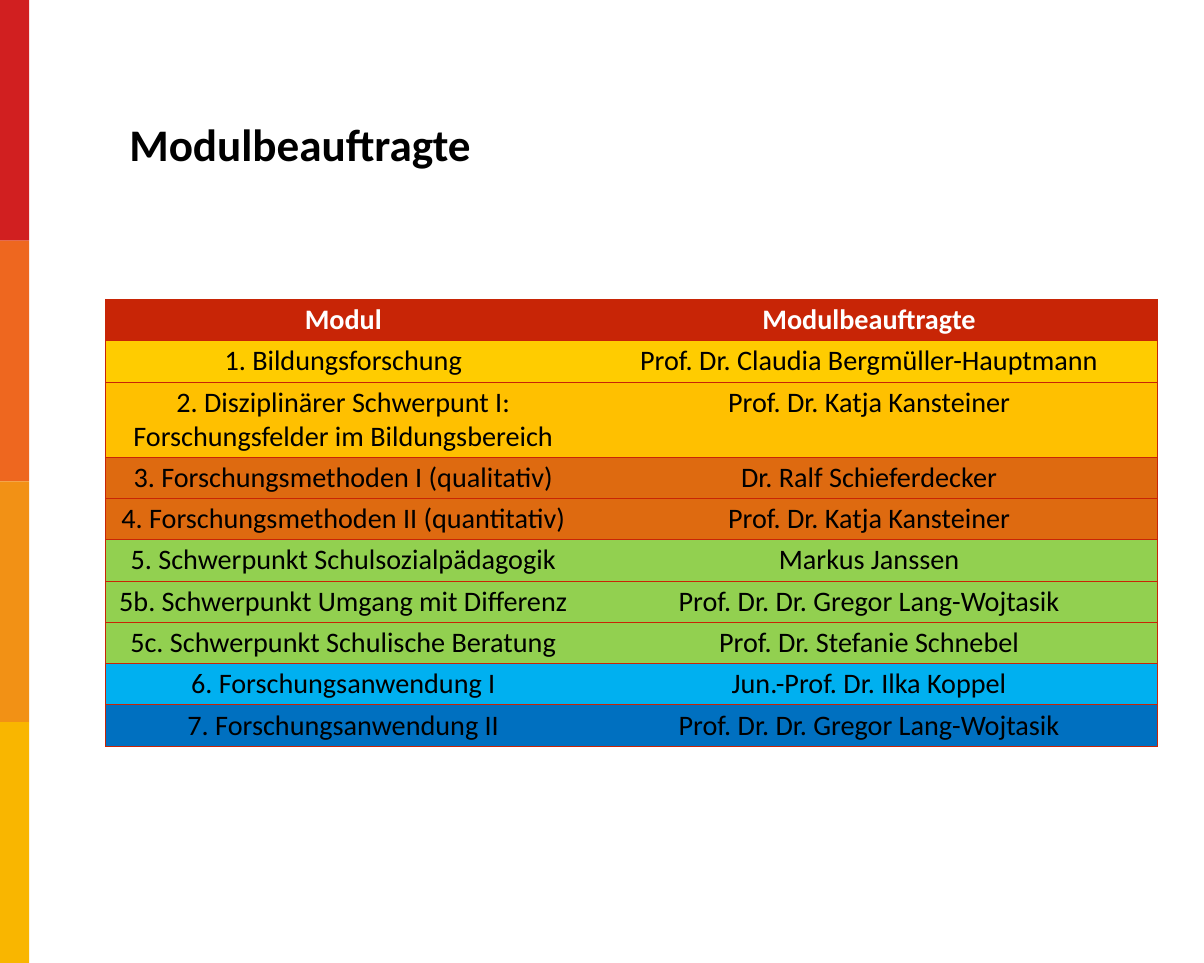
from lxml import etree
from pptx import Presentation
from pptx.dml.color import RGBColor
from pptx.enum.shapes import MSO_SHAPE
from pptx.enum.text import MSO_ANCHOR, PP_ALIGN
from pptx.oxml.ns import qn
from pptx.util import Inches, Pt

# Colours
BLACK = RGBColor(0x00, 0x00, 0x00)
WHITE = RGBColor(0xFF, 0xFF, 0xFF)
DARK_RED = RGBColor(0xC8, 0x25, 0x06)
YELLOW = RGBColor(0xFF, 0xCC, 0x00)
GOLD = RGBColor(0xFF, 0xC0, 0x00)
ORANGE = RGBColor(0xDE, 0x6A, 0x10)
GREEN = RGBColor(0x92, 0xD0, 0x50)
LIGHT_BLUE = RGBColor(0x00, 0xB0, 0xF0)
BLUE = RGBColor(0x00, 0x70, 0xC0)
STRIPE_COLORS = [
    RGBColor(0xD1, 0x1F, 0x20),
    RGBColor(0xEE, 0x67, 0x1F),
    RGBColor(0xF2, 0x91, 0x15),
    RGBColor(0xF9, 0xB6, 0x00),
]

# Content
TITLE = "Modulbeauftragte"
MODULES = [
    ("Modul", "Modulbeauftragte", DARK_RED),
    ("1. Bildungsforschung", "Prof. Dr. Claudia Bergmüller-Hauptmann", YELLOW),
    ("2. Disziplinärer Schwerpunt I: Forschungsfelder im Bildungsbereich",
     "Prof. Dr. Katja Kansteiner", GOLD),
    ("3. Forschungsmethoden I (qualitativ)", "Dr. Ralf Schieferdecker", ORANGE),
    ("4. Forschungsmethoden II (quantitativ)", "Prof. Dr. Katja Kansteiner", ORANGE),
    ("5. Schwerpunkt Schulsozialpädagogik", "Markus Janssen", GREEN),
    ("5b. Schwerpunkt Umgang mit Differenz", "Prof. Dr. Dr. Gregor Lang-Wojtasik", GREEN),
    ("5c. Schwerpunkt Schulische Beratung", "Prof. Dr. Stefanie Schnebel", GREEN),
    ("6. Forschungsanwendung I", "Jun.-Prof. Dr. Ilka Koppel", LIGHT_BLUE),
    ("7. Forschungsanwendung II", "Prof. Dr. Dr. Gregor Lang-Wojtasik", BLUE),
]

# Layout in inches
SLIDE_WIDTH, SLIDE_HEIGHT = 17.78, 14.22
STRIPE_WIDTH = 0.43
COLUMN_WIDTHS = [7.02, 8.51]
ROW_HEIGHT, TALL_ROW_HEIGHT = 0.61, 1.11
TALL_ROW = 2
PLAIN_TABLE_STYLE = "{2D5ABB26-0587-4C30-8999-92F81FD0307C}"


def add_text(paragraph, text, size, color, bold):
    run = paragraph.add_run()
    run.text = text
    run.font.name = "Calibri"
    run.font.size = Pt(size)
    run.font.bold = bold
    run.font.color.rgb = color


def add_borders(cell, edges):
    properties = cell._tc.get_or_add_tcPr()
    for edge in edges:
        line = etree.SubElement(properties, qn(f"a:ln{edge}"), w=str(Pt(1)))
        fill = etree.SubElement(line, qn("a:solidFill"))
        etree.SubElement(fill, qn("a:srgbClr"), val=str(DARK_RED))


def add_stripes(slide):
    height = SLIDE_HEIGHT / len(STRIPE_COLORS)
    for index, color in enumerate(STRIPE_COLORS):
        stripe = slide.shapes.add_shape(
            MSO_SHAPE.RECTANGLE, 0, Inches(index * height),
            Inches(STRIPE_WIDTH), Inches(height))
        stripe.shadow.inherit = False
        stripe.fill.solid()
        stripe.fill.fore_color.rgb = color
        stripe.line.fill.background()


def add_title(slide):
    box = slide.shapes.add_textbox(
        Inches(1.85), Inches(0.84), Inches(15.43), Inches(2.57))
    frame = box.text_frame
    frame.word_wrap = True
    frame.vertical_anchor = MSO_ANCHOR.MIDDLE
    frame.margin_left = frame.margin_right = Inches(0.06)
    frame.margin_top = frame.margin_bottom = Inches(0.06)
    add_text(frame.paragraphs[0], TITLE, 48, BLACK, True)


def add_module_table(slide):
    height = ROW_HEIGHT * (len(MODULES) - 1) + TALL_ROW_HEIGHT
    shape = slide.shapes.add_table(
        len(MODULES), len(COLUMN_WIDTHS), Inches(1.56), Inches(4.42),
        Inches(sum(COLUMN_WIDTHS)), Inches(height))
    table = shape.table
    table.horz_banding = False
    table._tbl.tblPr.find(qn("a:tableStyleId")).text = PLAIN_TABLE_STYLE
    for column, width in zip(table.columns, COLUMN_WIDTHS):
        column.width = Inches(width)
    for row_index, (module, person, color) in enumerate(MODULES):
        is_header = row_index == 0
        row = table.rows[row_index]
        row.height = Inches(TALL_ROW_HEIGHT if row_index == TALL_ROW else ROW_HEIGHT)
        for cell, text, edges in zip(row.cells, (module, person), ("LTB", "RTB")):
            add_borders(cell, edges)
            cell.fill.solid()
            cell.fill.fore_color.rgb = color
            paragraph = cell.text_frame.paragraphs[0]
            paragraph.alignment = PP_ALIGN.CENTER
            add_text(paragraph, text, 30, WHITE if is_header else BLACK, is_header)


def main():
    presentation = Presentation()
    presentation.slide_width = Inches(SLIDE_WIDTH)
    presentation.slide_height = Inches(SLIDE_HEIGHT)
    slide = presentation.slides.add_slide(presentation.slide_layouts[6])
    add_stripes(slide)
    add_title(slide)
    add_module_table(slide)
    presentation.save("out.pptx")


if __name__ == "__main__":
    main()
